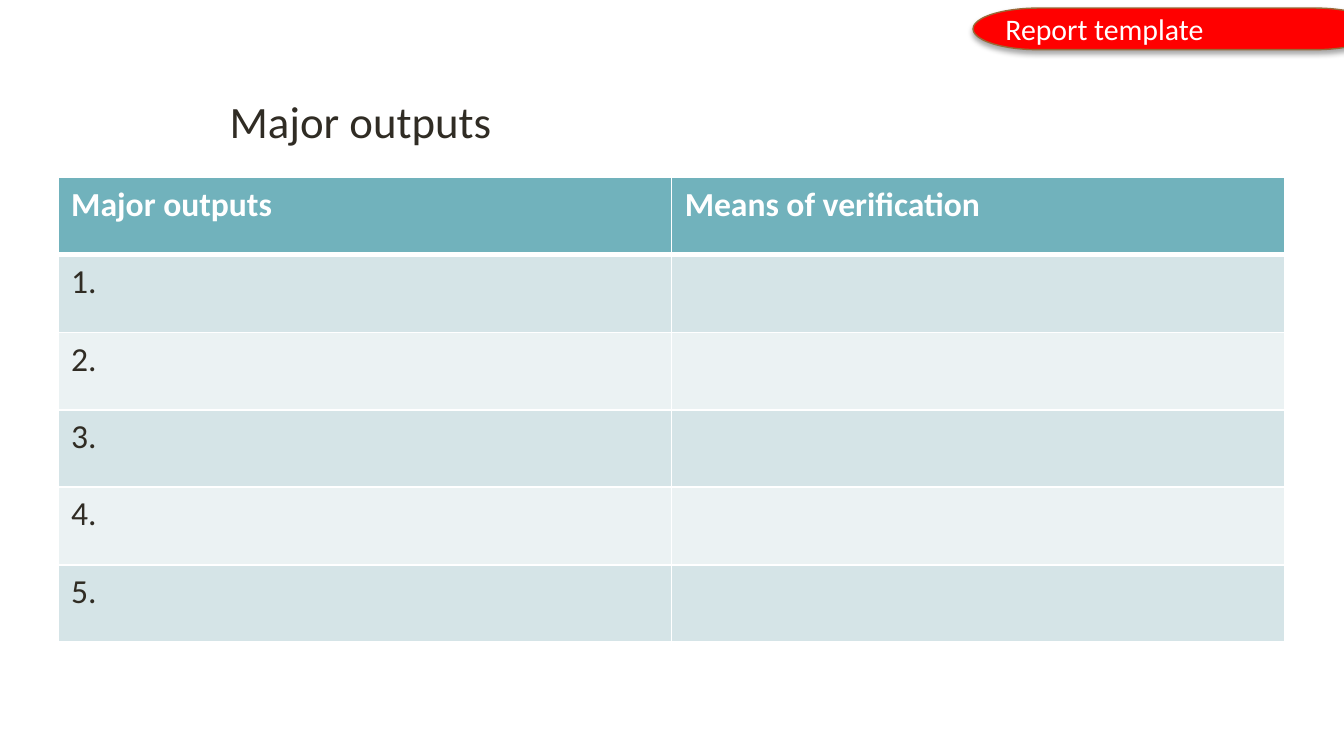
from dataclasses import dataclass

from lxml.etree import SubElement
from pptx import Presentation
from pptx.dml.color import RGBColor
from pptx.enum.shapes import MSO_SHAPE
from pptx.enum.text import MSO_ANCHOR, PP_ALIGN
from pptx.oxml import parse_xml
from pptx.oxml.ns import nsdecls, qn
from pptx.util import Inches, Pt

WHITE = RGBColor(0xFF, 0xFF, 0xFF)
INK = RGBColor(0x30, 0x2C, 0x24)
TEAL = RGBColor(0x71, 0xB2, 0xBC)
BAND_DARK = RGBColor(0xD5, 0xE4, 0xE7)
BAND_LIGHT = RGBColor(0xEB, 0xF2, 0xF3)
RED = RGBColor(0xFF, 0x00, 0x00)
BROWN = RGBColor(0x99, 0x69, 0x37)
BLACK = RGBColor(0x00, 0x00, 0x00)

FONT = "Calibri"
SLIDE_WIDTH = Inches(10)
SLIDE_HEIGHT = SLIDE_WIDTH * 9 // 16


@dataclass(frozen=True)
class Area:
    """A rectangle in inches."""
    left: float
    top: float
    width: float
    height: float

    def lengths(self) -> tuple:
        return tuple(map(Inches, (self.left, self.top, self.width, self.height)))


@dataclass(frozen=True)
class Row:
    cells: tuple[str, str]
    fill: RGBColor
    color: RGBColor = INK
    bold: bool = False
    rule_below: float = 1


ROWS = [Row(("Major outputs", "Means of verification"), TEAL, WHITE, True, 3)] + [
    Row((f"{number}.", ""), BAND_DARK if number % 2 else BAND_LIGHT)
    for number in range(1, 6)
]


def write_text(frame, text: str, *, size: float, color: RGBColor,
               bold: bool = False, line_spacing: float | None = None) -> None:
    frame.word_wrap = True
    para = frame.paragraphs[0]
    para.alignment = PP_ALIGN.LEFT
    para.line_spacing = line_spacing
    if text:
        span = para.add_run()
        span.text = text
        span.font.name = FONT
        span.font.size = Pt(size)
        span.font.bold = bold
        span.font.color.rgb = color


def set_cell_borders(cell, widths: dict[str, float]) -> None:
    """Draw white borders; the keys are the sides L, R, T and B in that order."""
    properties = cell._tc.get_or_add_tcPr()
    for position, (side, width) in enumerate(widths.items()):
        properties.insert(position, parse_xml(
            f'<a:ln{side} {nsdecls("a")} w="{Pt(width)}"><a:solidFill>'
            f'<a:srgbClr val="{WHITE}"/></a:solidFill></a:ln{side}>'))


def add_shadow(shape, *, blur: float, distance: float, opacity: int) -> None:
    """Cast a shadow straight down."""
    shape.shadow.inherit = False
    effects = shape._element.spPr.find(qn("a:effectLst"))
    shadow = SubElement(effects, qn("a:outerShdw"), blurRad=str(Pt(blur)),
                        dist=str(Pt(distance)), dir=str(90 * 60000), rotWithShape="0")
    color = SubElement(shadow, qn("a:srgbClr"), val=str(BLACK))
    SubElement(color, qn("a:alpha"), val=str(opacity * 1000))


def add_title(page, area: Area, text: str) -> None:
    box = page.shapes.add_textbox(*area.lengths())
    write_text(box.text_frame, text, size=24, color=INK, line_spacing=0.9)


def add_outputs_table(page, area: Area, rows: list[Row]) -> None:
    table = page.shapes.add_table(len(rows), 2, *area.lengths()).table
    rule_above = 1
    for index, row in enumerate(rows):
        for column, text in enumerate(row.cells):
            cell = table.cell(index, column)
            cell.fill.solid()
            cell.fill.fore_color.rgb = row.fill
            write_text(cell.text_frame, text, size=18, color=row.color, bold=row.bold)
            set_cell_borders(cell, {"L": 1, "R": 1, "T": rule_above, "B": row.rule_below})
        rule_above = row.rule_below


def add_badge(page, area: Area, text: str) -> None:
    badge = page.shapes.add_shape(MSO_SHAPE.FLOWCHART_TERMINATOR, *area.lengths())
    badge.fill.solid()
    badge.fill.fore_color.rgb = RED
    badge.line.color.rgb = BROWN
    badge.line.width = Pt(0.75)
    add_shadow(badge, blur=3.1, distance=1.8, opacity=35)
    badge.text_frame.vertical_anchor = MSO_ANCHOR.MIDDLE
    write_text(badge.text_frame, text, size=16, color=WHITE)


def main() -> None:
    deck = Presentation()
    deck.slide_width, deck.slide_height = SLIDE_WIDTH, SLIDE_HEIGHT
    page = deck.slides.add_slide(deck.slide_layouts[6])
    add_title(page, Area(1.61, 0.69, 7.62, 0.63), "Major outputs")
    add_outputs_table(page, Area(0.43, 1.32, 9.13, 3.46), ROWS)
    add_badge(page, Area(7.24, 0.06, 3.03, 0.31), "Report template")
    deck.save("out.pptx")


if __name__ == "__main__":
    main()
